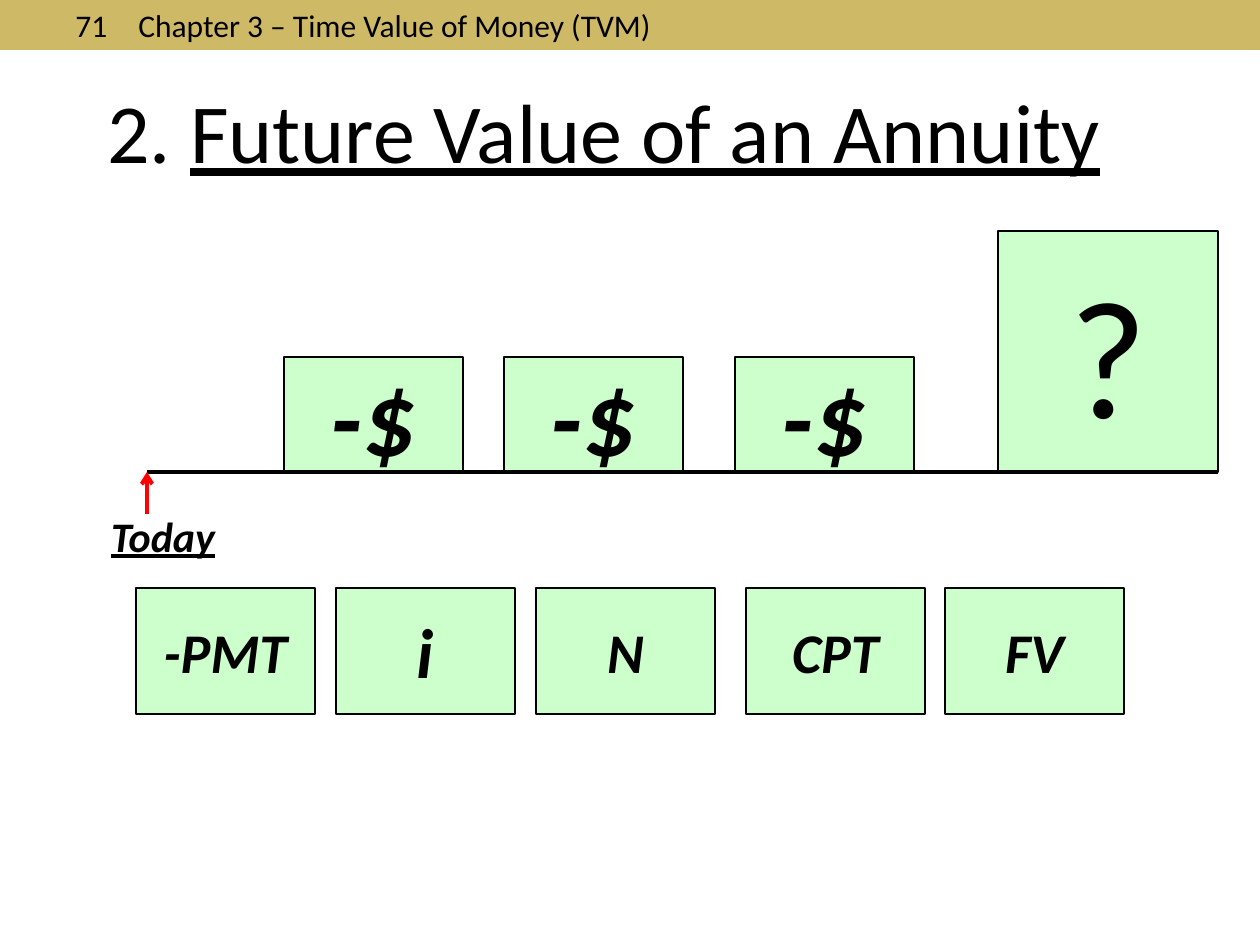
from lxml import etree
from pptx import Presentation
from pptx import util as u
from pptx.dml.color import RGBColor
from pptx.enum import shapes, text
from pptx.oxml.ns import qn

PX = 914400 / 126
COLORS = {"band": "CEB966", "box": "CCFFCC", "ink": "000000", "arrow": "FF0000"}
CENTER = text.PP_ALIGN.CENTER
PROCESS = shapes.MSO_SHAPE.FLOWCHART_PROCESS
RECT = shapes.MSO_SHAPE.RECTANGLE

prs = Presentation()
prs.slide_width, prs.slide_height = u.Inches(10), u.Inches(7.5)
slide = prs.slides.add_slide(prs.slide_layouts[6])


def emu(*lengths):
    return [round(length * PX) for length in lengths]


def style(paragraph, size, bold=False, align=None):
    paragraph.alignment = align
    font = paragraph.font
    font.name, font.size = "Calibri", u.Pt(size)
    font.bold = font.italic = bold
    font.color.rgb = RGBColor.from_string(COLORS["ink"])


band = slide.shapes.add_shape(RECT, *emu(0, 0, 1260, 50))
band.shadow.inherit = False
band.fill.solid()
band.fill.fore_color.rgb = RGBColor.from_string(COLORS["band"])
band.line.fill.background()

chapter = slide.shapes.add_textbox(*emu(0, 0, 809, 50)).text_frame
chapter.word_wrap = True
chapter.paragraphs[0].text = "71\tChapter 3 – Time Value of Money (TVM)"
chapter.paragraphs[0].level = 1
style(chapter.paragraphs[0], 18)

title = slide.shapes.add_textbox(*emu(95, 73, 1071, 115)).text_frame
title.word_wrap = True
title.paragraphs[0].add_run().text = "2. "
topic = title.paragraphs[0].add_run()
topic.text = "Future Value of an Annuity"
topic.font.underline = True
style(title.paragraphs[0], 48)

today = slide.shapes.add_textbox(*emu(84, 504, 158, 64)).text_frame
today.word_wrap = True
today.paragraphs[0].text = "Today"
style(today.paragraphs[0], 24, True, CENTER)
today.paragraphs[0].font.underline = True

timeline = 472
payments = [(PROCESS, x, timeline - 115, 179, 115, "-$", 60, True) for x in (284, 504, 735)]
future_value = [(PROCESS, 998, timeline - 241, 220, 241, "?", 96, False)]
keys = [
    (RECT, x, 588, 179, 126, label, size, True)
    for x, label, size in (
        (136, "-PMT", 32), (336, "i", 40), (536, "N", 32), (746, "CPT", 32), (945, "FV", 32)
    )
]
for kind, x, y, width, height, label, size, bold in payments + future_value + keys:
    box = slide.shapes.add_shape(kind, *emu(x, y, width, height))
    box.shadow.inherit = False
    box.fill.solid()
    box.fill.fore_color.rgb = RGBColor.from_string(COLORS["box"])
    box.line.color.rgb = RGBColor.from_string(COLORS["ink"])
    box.line.width = u.Pt(0.75)
    frame = box.text_frame
    frame.word_wrap = False
    frame.vertical_anchor = text.MSO_ANCHOR.MIDDLE
    frame.paragraphs[0].text = label
    style(frame.paragraphs[0], size, bold, CENTER)

for ends, color, head in (
    ((147, timeline, 1218, timeline), "ink", None),
    ((147, 514, 147, timeline), "arrow", "arrow"),
):
    rule = slide.shapes.add_connector(shapes.MSO_CONNECTOR.STRAIGHT, *emu(*ends))
    rule.line.color.rgb = RGBColor.from_string(COLORS[color])
    rule.line.width = u.Pt(2.25)
    if head:
        etree.SubElement(rule.line._get_or_add_ln(), qn("a:tailEnd"), type=head)
    etree.SubElement(rule._element.spPr, qn("a:effectLst"))

prs.save("out.pptx")
